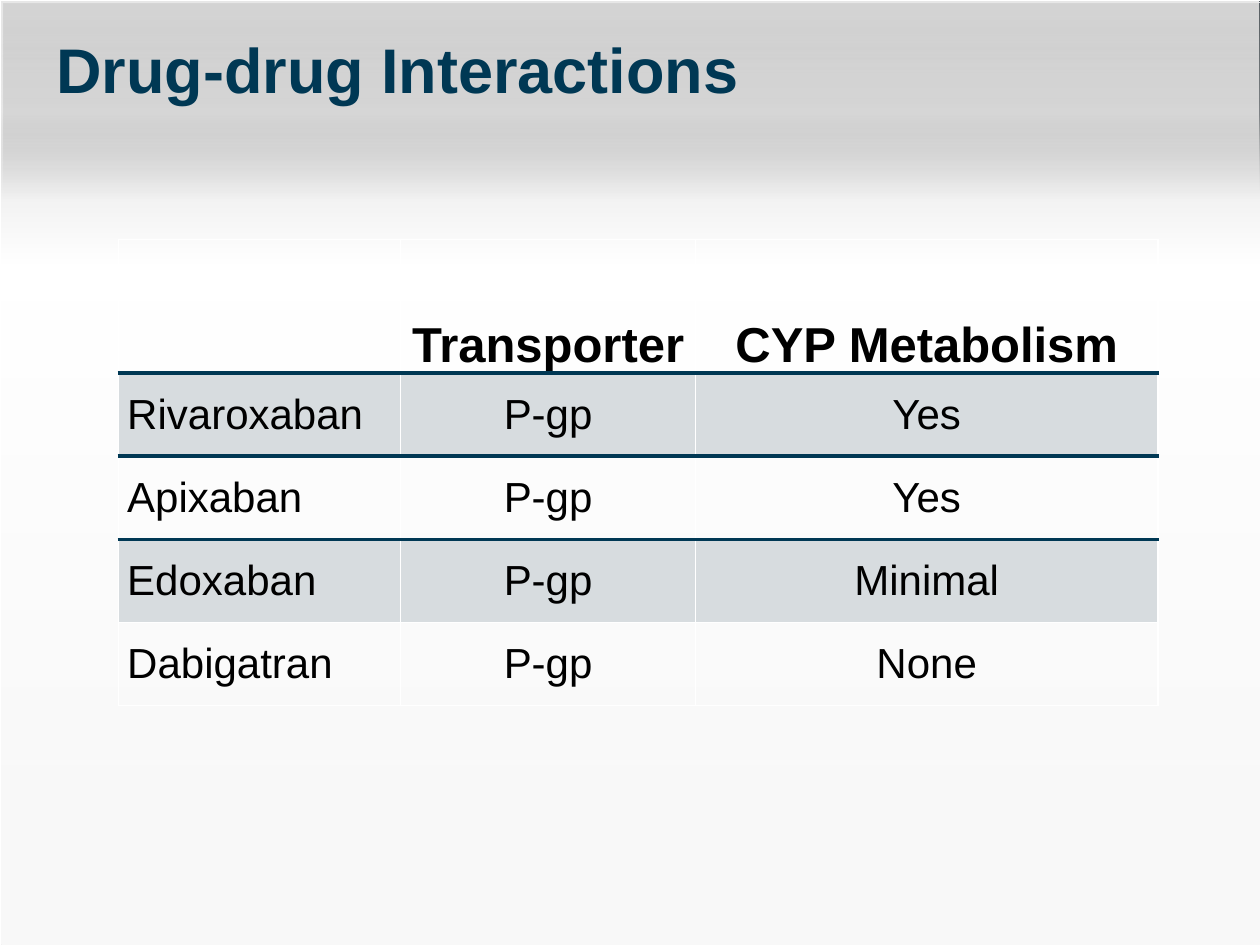
from lxml import etree
from pptx import Presentation
from pptx.dml.color import RGBColor
from pptx.enum.shapes import MSO_SHAPE
from pptx.enum.text import MSO_ANCHOR, PP_ALIGN
from pptx.oxml import parse_xml
from pptx.oxml.ns import nsdecls, qn
from pptx.util import Inches, Pt

RECT = MSO_SHAPE.RECTANGLE
LEFT, CENTER = PP_ALIGN.LEFT, PP_ALIGN.CENTER
MIDDLE, BOTTOM = MSO_ANCHOR.MIDDLE, MSO_ANCHOR.BOTTOM

NAVY = RGBColor(0x00, 0x38, 0x54)
SLATE = RGBColor(0x44, 0x4E, 0x54)
BAND = RGBColor(0xD7, 0xDC, 0xDF)
BLACK = RGBColor(0, 0, 0)
WHITE = RGBColor(0xFF, 0xFF, 0xFF)

# Gradient stops: position %, colour, opacity %
FADE = [(0, "808080", 18), (12, "B3B3B3", 31), (21, "F2F2F2", 100),
        (28, "FFFFFF", 100), (85, "F8F8F8", 100)]

ROWS = [
    ("", "Transporter", "CYP Metabolism"),
    ("Rivaroxaban", "P-gp", "Yes"),
    ("Apixaban", "P-gp", "Yes"),
    ("Edoxaban", "P-gp", "Minimal"),
    ("Dabigatran", "P-gp", "None"),
]
WIDTHS = [2.24, 2.34, 3.67]
HEIGHTS = [1.06] + [0.66] * 4


def write(frame, text, size=24, color=BLACK, bold=False, align=LEFT, gap=None):
    para = frame.paragraphs[0]
    para.alignment = align
    para.line_spacing = gap
    run = para.add_run()
    run.text = text
    font = run.font
    font.name, font.size, font.bold = "Arial", Pt(size), bold
    font.color.rgb = color


def rule(cell, side, color, width):
    """Draw a cell border; side is lnT or lnB."""
    line = parse_xml(
        f'<a:{side} {nsdecls("a")} w="{Pt(width)}"><a:solidFill>'
        f'<a:srgbClr val="{color}"/></a:solidFill></a:{side}>')
    # Borders come before the fill
    cell._tc.get_or_add_tcPr().insert(0, line)


class Deck:
    def __init__(self):
        self.prs = Presentation()
        self.prs.slide_width, self.prs.slide_height = Inches(10), Inches(7.5)
        self.slide = self.prs.slides.add_slide(self.prs.slide_layouts[6])

    def panel(self, x, y, w, h, line, width, stops=None):
        box = self.slide.shapes.add_shape(
            RECT, Inches(x), Inches(y), Inches(w), Inches(h))
        box.shadow.inherit = False
        box.line.color.rgb, box.line.width = line, Pt(width)
        box.fill.background()
        if stops:
            box.rotation = 180
            self.fade(box, stops)

    def fade(self, box, stops):
        box.fill.gradient()
        grad = box._element.spPr.find(qn("a:gradFill"))
        grad.set("rotWithShape", "1")
        for part in list(grad):
            grad.remove(part)
        group = etree.SubElement(grad, qn("a:gsLst"))
        for pos, color, alpha in stops:
            stop = etree.SubElement(group, qn("a:gs"), pos=str(pos * 1000))
            tint = etree.SubElement(stop, qn("a:srgbClr"), val=color)
            if alpha < 100:
                etree.SubElement(tint, qn("a:alpha"), val=str(alpha * 1000))
        etree.SubElement(grad, qn("a:lin"), ang=str(270 * 60000), scaled="0")

    def title(self, text, x, y, w, h):
        box = self.slide.shapes.add_textbox(
            Inches(x), Inches(y), Inches(w), Inches(h))
        frame = box.text_frame
        frame.word_wrap = True
        frame.vertical_anchor = MIDDLE
        write(frame, text, size=36, color=NAVY, bold=True, gap=0.9)

    def table(self, rows, x, y, widths, heights):
        table = self.slide.shapes.add_table(
            len(rows), len(widths), Inches(x), Inches(y),
            Inches(sum(widths)), Inches(sum(heights))).table
        table.first_row = table.horz_banding = False
        for col, width in zip(table.columns, widths):
            col.width = Inches(width)
        for row, height in zip(table.rows, heights):
            row.height = Inches(height)
        for r, row in enumerate(rows):
            for c, text in enumerate(row):
                self.cell(table.cell(r, c), text, r, c)

    def cell(self, cell, text, r, c):
        head = r == 0
        cell.margin_left = cell.margin_right = Inches(0.07)
        cell.margin_top = cell.margin_bottom = 0
        cell.vertical_anchor = BOTTOM if head else MIDDLE
        if r % 2:
            cell.fill.solid()
            cell.fill.fore_color.rgb = BAND
        else:
            cell.fill.background()
        # Lines above and below the first drug
        if r < 2:
            rule(cell, "lnB", NAVY, 2.25)
        if r in (1, 2):
            rule(cell, "lnT", NAVY, 2.25)
        if text:
            write(cell.text_frame, text, size=28 if head else 24, bold=head,
                  align=CENTER if c else LEFT)


def main():
    deck = Deck()
    # Background
    deck.panel(0, 0, 10, 7.5, SLATE, 1.5)
    for shift in (0.02, 0):
        deck.panel(shift, shift, 10, 7.5, WHITE, 0.25, FADE)
    # Content
    deck.title("Drug-drug Interactions", 0.35, 0.18, 8.5, 0.8)
    deck.table(ROWS, 0.94, 1.9, WIDTHS, HEIGHTS)
    deck.prs.save("out.pptx")


if __name__ == "__main__":
    main()
